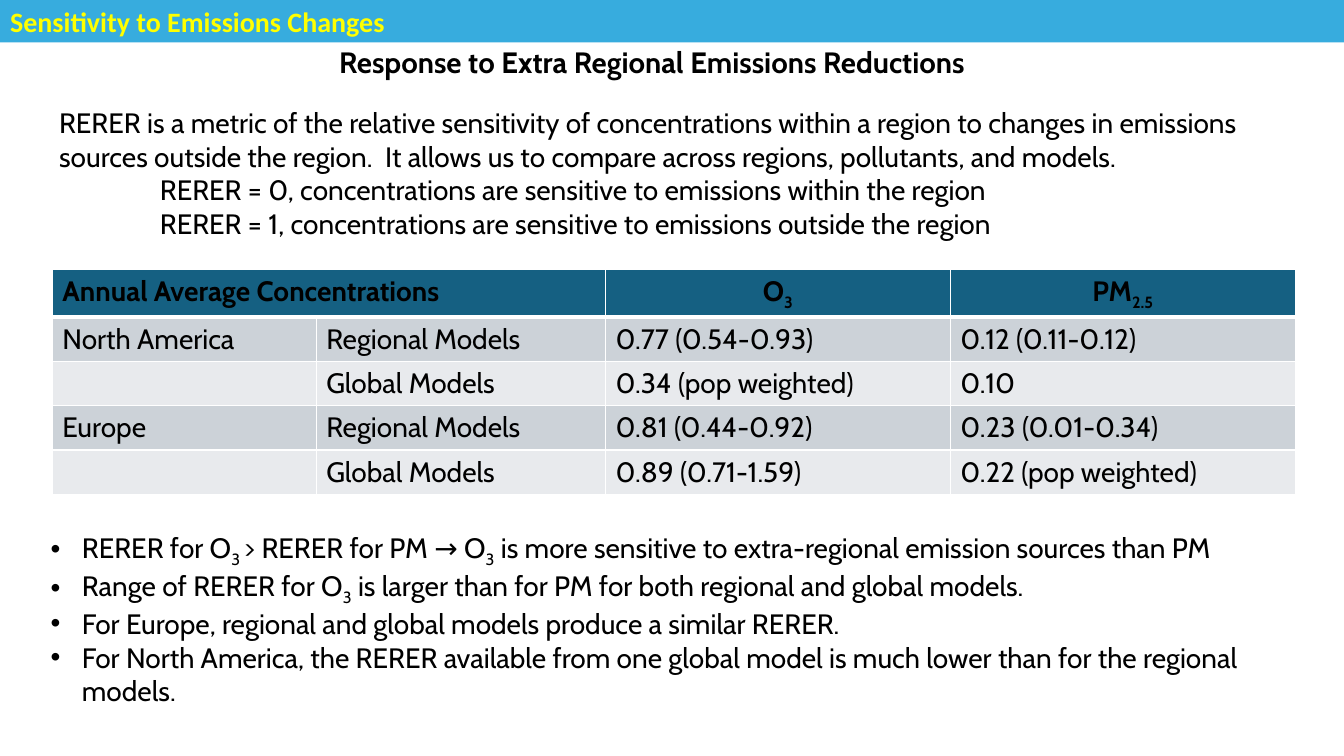
from pptx import Presentation
from pptx import util as u
from pptx.dml.color import RGBColor
from pptx.enum import text
from pptx.oxml import parse_xml
from pptx.oxml.ns import nsdecls

COLOURS = {
    "banner": "37ACDE", "banner text": "FFFF00", "text": "000000",
    "header": "156082", "odd row": "CCD2D8", "even row": "E8EAED", "rule": "FFFFFF",
}
SUB = {"baseline": -25000}
ARROW = {"name": "Roboto"}
LEFT, CENTER = text.PP_ALIGN.LEFT, text.PP_ALIGN.CENTER

INTRO = [
    (0.66, "RERER is a metric of the relative sensitivity of concentrations within a region to "
           "changes in emissions sources outside the region.  It allows us to compare across "
           "regions, pollutants, and models."),
    (3.2, "RERER = 0, concentrations are sensitive to emissions within the region"),
    (3.2, "RERER = 1, concentrations are sensitive to emissions outside the region"),
]
RESULTS = [
    ["Annual Average Concentrations", "", ["O", ("3", SUB)], ["PM", ("2.5", SUB)]],
    ["North America", "Regional Models", "0.77 (0.54-0.93)", "0.12 (0.11-0.12)"],
    ["", "Global Models", "0.34 (pop weighted)", "0.10"],
    ["Europe", "Regional Models", "0.81 (0.44-0.92)", "0.23 (0.01-0.34)"],
    ["", "Global Models", "0.89 (0.71-1.59)", "0.22 (pop weighted)"],
]
FINDINGS = [
    ["RERER for O", ("3 ", SUB), "> RERER for PM ", ("→", ARROW), " O", ("3", SUB),
     " is more sensitive to extra-regional emission sources than PM"],
    ["Range of RERER for O", ("3", SUB),
     " is larger than for PM for both regional and global models."],
    "For Europe, regional and global models produce a similar RERER.",
    "For North America, the RERER available from one global model is much lower than for the "
    "regional models.",
]


def colour(name):
    return RGBColor.from_string(COLOURS[name])


def place(shape, left, top, width, height):
    for side, value in dict(left=left, top=top, width=width, height=height).items():
        setattr(shape, side, u.Cm(value))


class SlideBuilder:
    base = {"name": "Cabin", "size": u.Pt(20), "bold": False}

    def __init__(self, deck):
        self.page = deck.slides.add_slide(deck.slide_layouts[1])

    def fill_para(self, para, content, ink="text", align=LEFT, spacing=1.0, margin=0, indent=0,
                  **style):
        """Fill a paragraph from a string or a list of strings and (string, format) pairs."""
        layout = {"alignment": align, "line_spacing": spacing,
                  "space_before": u.Pt(0), "space_after": u.Pt(0)}
        for name, value in layout.items():
            setattr(para, name, value)
        properties = para._p.get_or_add_pPr()
        properties.set("marL", str(u.Cm(margin)))
        properties.set("indent", str(u.Cm(indent)))
        for piece in [content] if isinstance(content, str) else content:
            words, extra = (piece, {}) if isinstance(piece, str) else piece
            span = para.add_run()
            span.text = words
            span.font.color.rgb = colour(ink)
            for name, value in {**self.base, **style, **extra}.items():
                if name == "baseline":
                    span._r.get_or_add_rPr().set(name, str(value))
                else:
                    setattr(span.font, name, value)

    def frame(self, shape, anchor=text.MSO_ANCHOR.TOP):
        frame = shape.text_frame
        settings = {"word_wrap": True, "auto_size": text.MSO_AUTO_SIZE.NONE,
                    "vertical_anchor": anchor}
        for name, value in settings.items():
            setattr(frame, name, value)
        return frame

    def paragraphs(self, frame, count):
        return [frame.paragraphs[0]] + [frame.add_paragraph() for _ in range(count - 1)]

    def banner(self, words, *area):
        title = self.page.shapes.title
        place(title, *area)
        title.fill.solid()
        title.fill.fore_color.rgb = colour("banner")
        frame = self.frame(title, text.MSO_ANCHOR.MIDDLE)
        self.fill_para(frame.paragraphs[0], words, "banner text", name="Calibri", bold=True)

    def textbox(self, *area):
        return self.frame(self.page.shapes.add_textbox(*map(u.Cm, area)))

    def heading(self, words, *area):
        para = self.textbox(*area).paragraphs[0]
        self.fill_para(para, words, align=CENTER, spacing=0.8, size=u.Pt(21), bold=True)

    def intro(self, lines, *area):
        paras = self.paragraphs(self.textbox(*area), len(lines))
        for para, (margin, words) in zip(paras, lines):
            self.fill_para(para, words, margin=margin)

    def bullets(self, items, *area):
        body = self.page.placeholders[1]
        place(body, *area)
        for para, item in zip(self.paragraphs(self.frame(body), len(items)), items):
            self.fill_para(para, item, margin=0.79, indent=-0.79)

    def borders(self, cell, top, bottom):
        properties = cell._tc.get_or_add_tcPr()
        for side, width in {"L": 1, "R": 1, "T": top, "B": bottom}.items():
            properties.append(parse_xml(
                f'<a:ln{side} {nsdecls("a")} w="{u.Pt(width)}"><a:solidFill>'
                f'<a:srgbClr val="{COLOURS["rule"]}"/></a:solidFill></a:ln{side}>'))

    def table(self, rows, left, top, widths, heights):
        area = map(u.Cm, (left, top, sum(widths), sum(heights)))
        grid = self.page.shapes.add_table(len(rows), len(widths), *area).table
        for column, width in zip(grid.columns, widths):
            column.width = u.Cm(width)
        for line, height in zip(grid.rows, heights):
            line.height = u.Cm(height)
        for r, row in enumerate(rows):
            shade = "header" if r == 0 else "odd row" if r % 2 else "even row"
            for c, content in enumerate(row):
                cell = grid.cell(r, c)
                self.borders(cell, 3 if r == 1 else 1, 3 if r == 0 else 1)
                cell.fill.solid()
                cell.fill.fore_color.rgb = colour(shade)
                align = CENTER if r == 0 and c > 1 else LEFT
                self.fill_para(cell.text_frame.paragraphs[0], content, align=align, bold=r == 0)
        grid.cell(0, 0).merge(grid.cell(0, 1))


def main():
    deck = Presentation()
    deck.slide_width, deck.slide_height = u.Cm(33.87), u.Cm(19.05)
    slide = SlideBuilder(deck)
    slide.banner("Sensitivity to Emissions Changes", 0, 0, 33.87, 1.07)
    slide.heading("Response to Extra Regional Emissions Reductions", 3.73, 1.17, 25.4, 1)
    slide.intro(INTRO, 0.58, 2.54, 32.46, 3.6)
    slide.table(RESULTS, 1.32, 6.78, [6.65, 7.29, 8.69, 8.69], [1.2] + [1.1] * 4)
    slide.bullets(FINDINGS, 1.02, 13.23, 32.03, 4.7)
    deck.save("out.pptx")


if __name__ == "__main__":
    main()
